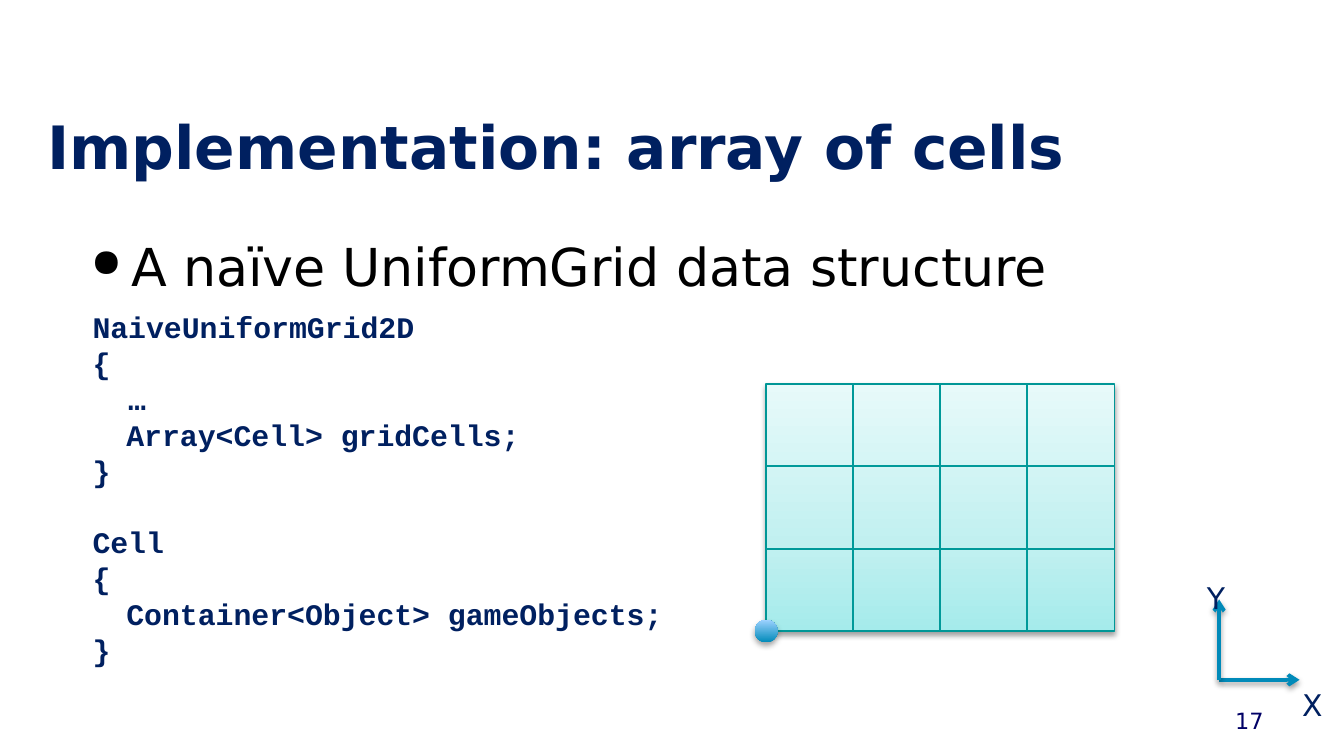
from lxml import etree
from pptx import Presentation, util as u
from pptx.dml.color import RGBColor
from pptx.enum import shapes, text
from pptx.oxml.ns import qn

NAVY = RGBColor(0x00, 0x20, 0x60)
BLACK = RGBColor(0x00, 0x00, 0x00)
NUMBER_BLUE = RGBColor(0x00, 0x00, 0x66)
GRID_EDGE = RGBColor(0x00, 0x96, 0x96)
GRID_LINE = RGBColor(0x00, 0x99, 0x99)
AXIS_BLUE = RGBColor(0x00, 0x8A, 0xB9)
DOT_TOP = RGBColor(0x9D, 0xD2, 0xFF)
GRID_FADE = [(0, RGBColor(0xA5, 0xEB, 0xEB)), (35, RGBColor(0xC1, 0xF0, 0xF0)),
             (100, RGBColor(0xE7, 0xFA, 0xFA))]
DOT_FADE = [(0, AXIS_BLUE), (100, DOT_TOP)]

SANS, MONO = "DejaVu Sans", "Courier New"
CODE_PITCH = u.Pt(19.2)
CODE_BLOCKS = [
    ["NaiveUniformGrid2D", "{", "  …", "\tArray<Cell> gridCells;", "}"],
    ["Cell", "{", "\tContainer<Object> gameObjects;", "}"],
]


def add_child(parent, tag, **attributes):
    return etree.SubElement(parent, qn(tag), {k: str(v) for k, v in attributes.items()})


def set_effects(shape, opacity=None, distance=1.6):
    """Give the shape a soft shadow below it, or none without an opacity."""
    properties = shape._element.spPr
    for old in properties.findall(qn("a:effectLst")):
        properties.remove(old)
    effects = add_child(properties, "a:effectLst")
    if opacity:
        shadow = add_child(effects, "a:outerShdw", blurRad=u.Pt(3.1), dist=u.Pt(distance),
                           dir=5400000, rotWithShape=0)
        add_child(add_child(shadow, "a:srgbClr", val=BLACK), "a:alpha", val=opacity * 1000)


def set_gradient(shape, stops):
    """Fade upwards through (percent, colour) stops."""
    shape.fill.gradient()
    shape.fill.gradient_angle = 90
    stop_list = shape._element.spPr.find(qn("a:gradFill")).find(qn("a:gsLst"))
    for old in list(stop_list):
        stop_list.remove(old)
    for percent, colour in stops:
        stop = add_child(stop_list, "a:gs", pos=percent * 1000)
        add_child(stop, "a:srgbClr", val=colour)


def add_text_box(slide, box, wrap=True, top_inset=0.13):
    shape = slide.shapes.add_textbox(*map(u.Cm, box))
    frame = shape.text_frame
    frame.word_wrap = wrap
    frame.margin_top = u.Cm(top_inset)
    return frame


def add_run(paragraph, words, size, colour, font=SANS, bold=False):
    run = paragraph.add_run()
    run.text = words
    run.font.name, run.font.size, run.font.bold = font, u.Pt(size), bold
    run.font.color.rgb = colour


def add_line(slide, start, end, colour, width):
    line = slide.shapes.add_connector(shapes.MSO_CONNECTOR.STRAIGHT,
                                      *map(u.Cm, (*start, *end)))
    line.line.color.rgb = colour
    line.line.width = u.Pt(width)
    set_effects(line)
    return line


def add_title(slide, box):
    paragraph = add_text_box(slide, box, top_inset=0.23).paragraphs[0]
    add_run(paragraph, "Implementation: array of cells", 32, NAVY, bold=True)


def add_bullet(slide, box):
    paragraph = add_text_box(slide, box, top_inset=0.23).paragraphs[0]
    properties = paragraph._p.get_or_add_pPr()
    properties.set("marL", str(u.Cm(0.76)))
    properties.set("indent", str(u.Cm(-0.76)))
    add_child(add_child(properties, "a:buClr"), "a:srgbClr", val=BLACK)
    add_child(properties, "a:buSzPct", val=75000)
    add_child(properties, "a:buChar", char="●")
    add_run(paragraph, "A naïve UniformGrid data structure", 28, BLACK)


def add_code(slide, box):
    frame = add_text_box(slide, box, top_inset=0.18)
    paragraph = frame.paragraphs[0]
    for block_index, block in enumerate(CODE_BLOCKS):
        for line_index, line in enumerate(block):
            if block_index or line_index:
                paragraph = frame.add_paragraph()
            paragraph.line_spacing = CODE_PITCH
            if block_index and not line_index:
                paragraph.space_before = CODE_PITCH
            if line.startswith("\t"):
                tabs = add_child(paragraph._p.get_or_add_pPr(), "a:tabLst")
                add_child(tabs, "a:tab", pos=u.Cm(0.64), algn="l")
            add_run(paragraph, line, 16, NAVY, MONO, bold=True)


def add_grid(slide, box, columns=4, rows=3):
    left, top, width, height = box
    right, bottom = left + width, top + height
    panel = slide.shapes.add_shape(shapes.MSO_SHAPE.RECTANGLE, *map(u.Cm, box))
    set_gradient(panel, GRID_FADE)
    panel.line.color.rgb = GRID_EDGE
    panel.line.width = u.Pt(0.75)
    set_effects(panel, opacity=38)
    for column in range(1, columns):
        x = left + width * column / columns
        add_line(slide, (x, top), (x, bottom), GRID_LINE, 1)
    for row in range(1, rows):
        y = top + height * row / rows
        add_line(slide, (left, y), (right, y), GRID_LINE, 1)

    # Origin dot, centred on the lower left corner
    size = 0.43
    dot = slide.shapes.add_shape(shapes.MSO_SHAPE.OVAL, u.Cm(left - size / 2),
                                 u.Cm(bottom - size / 2), u.Cm(size), u.Cm(size))
    set_gradient(dot, DOT_FADE)
    dot.line.fill.background()
    set_effects(dot, opacity=35, distance=1.8)


def add_axes(slide, box):
    left, top, width, height = box
    origin = (left, top + height)
    for end in ((left + width, top + height), (left, top)):
        arrow = add_line(slide, origin, end, AXIS_BLUE, 2)
        add_child(arrow.line._get_or_add_ln(), "a:tailEnd", type="arrow")
        set_effects(arrow, opacity=38)
    for name, x, y in (("X", left + width - 0.2, top + height),
                       ("Y", left - 0.48, top - 0.51)):
        frame = add_text_box(slide, (x, y, 0.7, 0.74), wrap=False)
        frame.auto_size = text.MSO_AUTO_SIZE.SHAPE_TO_FIT_TEXT
        paragraph = frame.paragraphs[0]
        paragraph.alignment = text.PP_ALIGN.RIGHT
        add_run(paragraph, name, 16, NAVY)


def add_slide_number(slide, box):
    frame = add_text_box(slide, box)
    frame.vertical_anchor = text.MSO_ANCHOR.MIDDLE
    paragraph = frame.paragraphs[0]
    paragraph.alignment = text.PP_ALIGN.RIGHT
    add_run(paragraph, "17", 12, NUMBER_BLUE)


def main():
    presentation = Presentation()
    presentation.slide_width, presentation.slide_height = u.Cm(25.4), u.Cm(14.29)
    slide = presentation.slides.add_slide(presentation.slide_layouts[6])
    add_title(slide, (0.64, 1.85, 24.13, 2.16))
    add_bullet(slide, (1.47, 4.19, 22.43, 7.62))
    add_slide_number(slide, (18.21, 13.23, 5.92, 0.76))
    add_grid(slide, (14.48, 7.26, 6.58, 4.67))
    add_axes(slide, (23.04, 11.33, 1.52, 1.52))
    add_code(slide, (1.5, 5.66, 11.43, 7.09))
    presentation.save("out.pptx")


if __name__ == "__main__":
    main()
